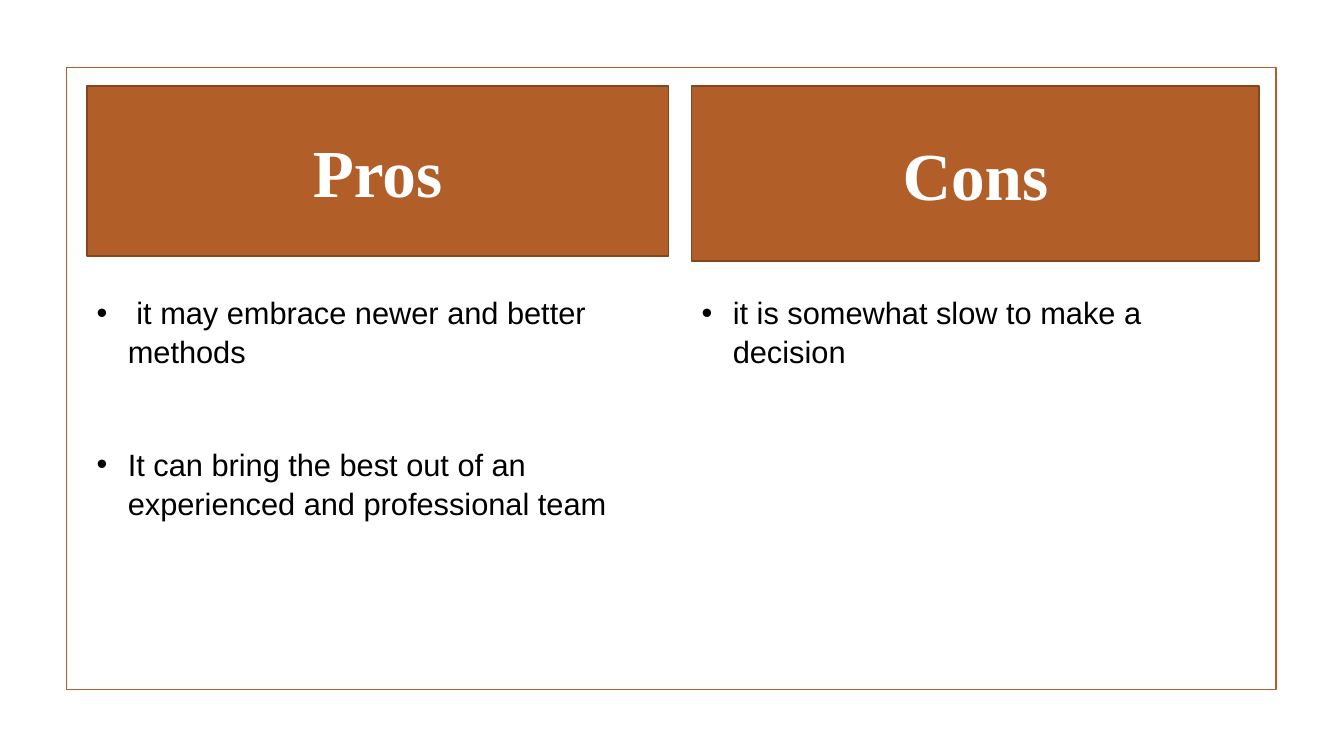
from dataclasses import dataclass

from lxml.etree import SubElement
from pptx import Presentation
from pptx.dml.color import RGBColor
from pptx.enum.shapes import MSO_SHAPE
from pptx.enum.text import MSO_ANCHOR, PP_ALIGN
from pptx.oxml.ns import qn
from pptx.util import Inches, Pt


@dataclass(frozen=True)
class Theme:
    accent: RGBColor = RGBColor.from_string("B15E28")
    outline: RGBColor = RGBColor.from_string("83461E")
    heading: RGBColor = RGBColor.from_string("FFFFFF")
    body: RGBColor = RGBColor.from_string("000000")
    heading_font: str = "Times New Roman"
    body_font: str = "Arial"
    heading_size: float = 48
    body_size: float = 22
    line_width: float = 1.25


THEME = Theme()
COLUMN_TOP = 0.85
LIST_TOP = 2.85
BULLET_INDENT = 0.31
ITEM_GAP = 52.8


def add_text(para, text, *, font, size, color, bold=False):
    span = para.add_run()
    span.text = text
    span.font.name = font
    span.font.size = Pt(size)
    span.font.bold = bold
    span.font.color.rgb = color


def add_rectangle(page, left, top, width, height, *, line, fill=None):
    box = page.shapes.add_shape(
        MSO_SHAPE.RECTANGLE, Inches(left), Inches(top), Inches(width), Inches(height))
    box.shadow.inherit = False
    if fill is None:
        box.fill.background()
    else:
        box.fill.solid()
        box.fill.fore_color.rgb = fill
    box.line.color.rgb = line
    box.line.width = Pt(THEME.line_width)
    return box


def add_heading(page, text, left, width, height):
    box = add_rectangle(page, left, COLUMN_TOP, width, height,
                        line=THEME.outline, fill=THEME.accent)
    box.text_frame.vertical_anchor = MSO_ANCHOR.MIDDLE
    para = box.text_frame.paragraphs[0]
    para.alignment = PP_ALIGN.CENTER
    add_text(para, text, font=THEME.heading_font, size=THEME.heading_size,
             color=THEME.heading, bold=True)


def set_bullet(para):
    """Give the paragraph a round bullet with a hanging indent."""
    properties = para._p.get_or_add_pPr()
    properties.set("marL", str(Inches(BULLET_INDENT)))
    properties.set("indent", str(-Inches(BULLET_INDENT)))
    SubElement(properties, qn("a:buFont"), typeface=THEME.body_font)
    SubElement(properties, qn("a:buChar"), char="•")


def add_bullet_list(page, items, left, width, height):
    box = page.shapes.add_textbox(
        Inches(left), Inches(LIST_TOP), Inches(width), Inches(height))
    frame = box.text_frame
    frame.word_wrap = True
    for index, item in enumerate(items):
        para = frame.add_paragraph() if index else frame.paragraphs[0]
        set_bullet(para)
        para.line_spacing = 1.05
        if index:
            para.space_before = Pt(ITEM_GAP)
        add_text(para, item, font=THEME.body_font, size=THEME.body_size, color=THEME.body)


def main():
    deck = Presentation()
    deck.slide_width = Inches(13.33)
    deck.slide_height = Inches(7.5)
    page = deck.slides.add_slide(deck.slide_layouts[6])

    add_rectangle(page, 0.66, 0.67, 12, 6.17, line=THEME.accent)
    add_heading(page, "Pros", 0.86, 5.77, 1.69)
    add_heading(page, "Cons", 6.86, 5.63, 1.74)
    add_bullet_list(page, [
        " it may embrace newer and better methods",
        "It can bring the best out of an experienced and professional team",
    ], 0.86, 5.77, 3.43)
    add_bullet_list(page, ["it is somewhat slow to make a decision"], 6.86, 5.39, 1.58)

    deck.save("out.pptx")


if __name__ == "__main__":
    main()
